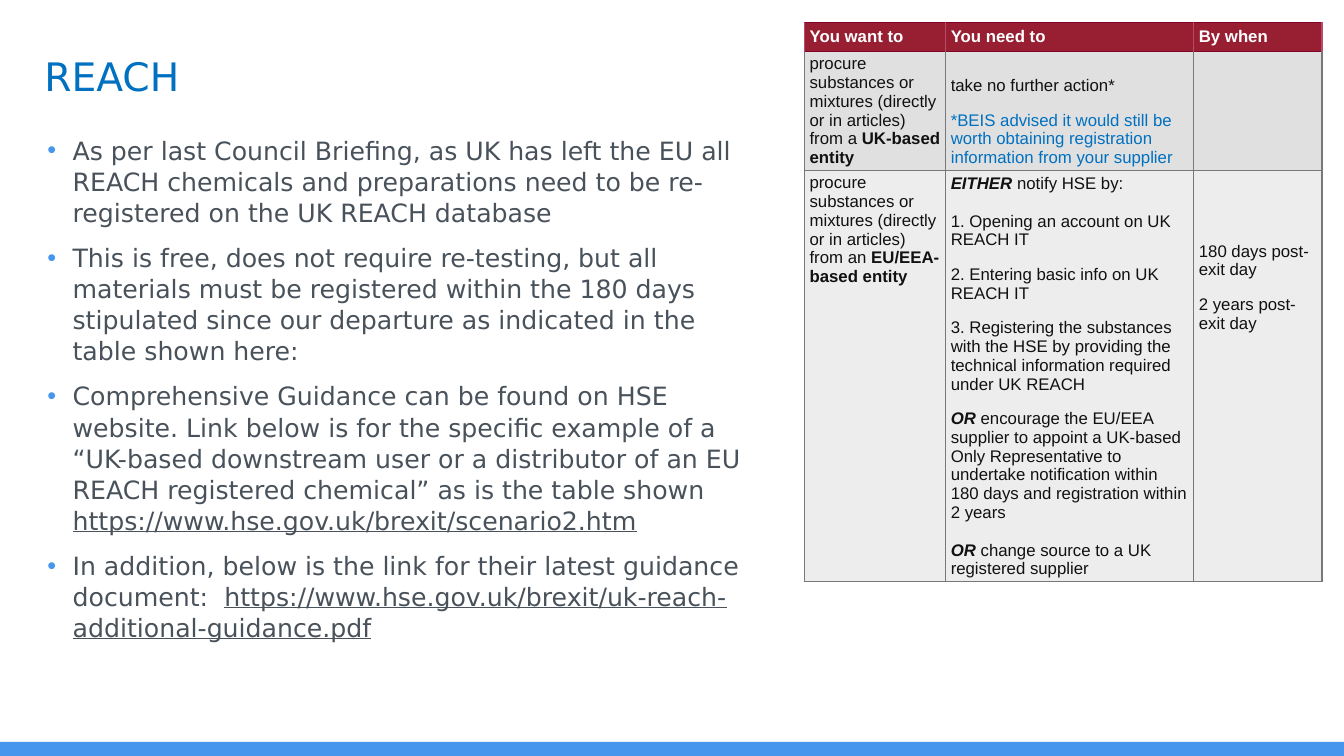
from dataclasses import dataclass

from lxml import etree
from pptx import Presentation
from pptx import util as u
from pptx.dml.color import RGBColor
from pptx.enum import shapes, text
from pptx.oxml.ns import qn


@dataclass(frozen=True)
class Theme:
    """Colours, fonts and type sizes of the slide."""
    accent: str = "4596EC"
    blue: str = "0070C0"
    slate: str = "49525B"
    ink: str = "111111"
    white: str = "FFFFFF"
    crimson: str = "981E32"
    crimson_dark: str = "7F032A"
    crimson_light: str = "B94869"
    rule: str = "787878"
    row_fills: tuple = ("E0E0E0", "EDEDED")
    head_font: str = "DejaVu Sans"
    table_font: str = "Arial"
    title_size: float = 28
    body_size: float = 18
    table_size: float = 12
    bullet_gap: float = 10
    cell_gap: float = 11.2
    line_gap: float = 13.4


THEME = Theme()
WIDTH, HEIGHT = u.Inches(13.33), u.Inches(7.5)

BULLETS = [
    [("As per last Council Briefing, as UK has left the EU all REACH chemicals and "
      "preparations need to be re-registered on the UK REACH database", "")],
    [("This is free, does not require re-testing, but all materials must be registered "
      "within the 180 days stipulated since our departure as indicated in the table "
      "shown here:", "")],
    [("Comprehensive Guidance can be found on HSE website. Link below is for the specific "
      "example of a “UK-based downstream user or a distributor of an EU REACH registered "
      "chemical” as is the table shown ", ""),
     ("https://www.hse.gov.uk/brexit/scenario2.htm", "u")],
    [("In addition, below is the link for their latest guidance document:  ", ""),
     ("https://www.hse.gov.uk/brexit/uk-reach-additional-guidance.pdf", "u")],
]

HEADINGS = ["You want to", "You need to", "By when"]
SOURCING = "procure substances or mixtures (directly or in articles) from "
UK_WANT = [([(SOURCING + "a ", ""), ("UK-based entity", "b")], 0)]
UK_NEED = [
    ([("take no further action*", "")], THEME.cell_gap),
    ([("*BEIS advised it would still be worth obtaining registration information from "
       "your supplier", "c")], 0),
]
EU_WANT = [([(SOURCING + "an ", ""), ("EU/EEA-based entity", "b")], 0)]
EU_NEED = [
    ([("EITHER ", "bi"), ("notify HSE by:", "")], THEME.line_gap),
    ([("1. Opening an account on UK REACH IT", "")], THEME.cell_gap),
    ([("2. Entering basic info on UK REACH IT", "")], THEME.cell_gap),
    ([("3. Registering the substances with the HSE by providing the technical "
       "information required under UK REACH", "")], THEME.cell_gap),
    ([("OR ", "bi"), ("encourage the EU/EEA supplier to appoint a UK-based Only "
                      "Representative to undertake notification within 180 days and "
                      "registration within 2 years", "")], THEME.line_gap),
    ([("OR", "bi"), (" change source to a UK registered supplier", "")], 0),
]
EU_WHEN = [
    ([("180 days post-exit day", "")], THEME.cell_gap),
    ([("2 years post-exit day", "")], 0),
]


def share(left, top, width, height):
    """Turn percentages of the slide into a box."""
    return tuple(round(part * side / 100) for part, side in
                 zip((left, top, width, height), (WIDTH, HEIGHT) * 2))


def place(item, box):
    """Move a placeholder into a box."""
    item.left, item.top, item.width, item.height = box


def add_runs(paragraph, runs, font, size, color):
    """Write runs; marks are b bold, i italic, u underlined, c blue."""
    for words, marks in runs:
        run = paragraph.add_run()
        run.text = words
        run.font.name, run.font.size = font, u.Pt(size)
        run.font.bold, run.font.italic = "b" in marks, "i" in marks
        run.font.underline = "u" in marks
        run.font.color.rgb = RGBColor.from_string(THEME.blue if "c" in marks else color)


def next_paragraph(frame, index):
    """Return the first paragraph of a frame, or a further one."""
    return frame.paragraphs[0] if index == 0 else frame.add_paragraph()


def prepare(frame):
    """Give a frame top anchoring, wrapping and a fixed size."""
    frame.word_wrap = True
    frame.auto_size = text.MSO_AUTO_SIZE.NONE
    frame.vertical_anchor = text.MSO_ANCHOR.TOP


def add_color(parent, color):
    """Append a solid colour to an XML element."""
    solid = etree.SubElement(parent, qn("a:solidFill"))
    etree.SubElement(solid, qn("a:srgbClr"), val=color)


def draw_footer(slide, box):
    """Draw the strip along the foot of the slide."""
    strip = slide.shapes.add_shape(shapes.MSO_SHAPE.RECTANGLE, *box)
    strip.shadow.inherit = False
    strip.fill.solid()
    strip.fill.fore_color.rgb = RGBColor.from_string(THEME.accent)
    strip.line.fill.background()


def fill_title(title, box):
    """Place and write the title."""
    place(title, box)
    frame = title.text_frame
    prepare(frame)
    frame.margin_left, frame.margin_top = u.Inches(0.07), u.Inches(0.08)
    heading = frame.paragraphs[0]
    heading.alignment = text.PP_ALIGN.LEFT
    add_runs(heading, [("REACH", "")], THEME.head_font, THEME.title_size, THEME.blue)


def fill_bullets(body, box):
    """Place and write the bullet list."""
    place(body, box)
    frame = body.text_frame
    prepare(frame)
    for index, runs in enumerate(BULLETS):
        point = next_paragraph(frame, index)
        props = point._p.get_or_add_pPr()
        props.set("marL", str(u.Inches(0.25)))
        props.set("indent", str(-u.Inches(0.25)))
        tint = etree.SubElement(props, qn("a:buClr"))
        etree.SubElement(tint, qn("a:srgbClr"), val=THEME.accent)
        etree.SubElement(props, qn("a:buChar"), char="•")
        point.line_spacing = 1.03
        point.space_before = u.Pt(THEME.bullet_gap if index else 0)
        add_runs(point, runs, THEME.head_font, THEME.body_size, THEME.slate)


def fill_cell(cell, paragraphs, fill, color, sides, bottom=False, pad=0.03, top=None):
    """Write one cell; sides are the left, right, top and bottom line colours."""
    props = cell._tc.get_or_add_tcPr()
    for side, side_color in zip("LRTB", sides):
        line = etree.SubElement(props, qn("a:ln" + side), w=str(u.Pt(1)))
        add_color(line, side_color)
    cell.fill.solid()
    cell.fill.fore_color.rgb = RGBColor.from_string(fill)
    cell.margin_left = cell.margin_right = u.Inches(0.05)
    cell.margin_top, cell.margin_bottom = u.Inches(top or pad), u.Inches(pad)
    cell.vertical_anchor = text.MSO_ANCHOR.BOTTOM if bottom else text.MSO_ANCHOR.TOP
    for index, (runs, gap) in enumerate(paragraphs):
        paragraph = next_paragraph(cell.text_frame, index)
        paragraph.space_after = u.Pt(gap)
        add_runs(paragraph, runs, THEME.table_font, THEME.table_size, color)


def draw_deadlines(slide, box):
    """Draw the table of aims, duties and deadlines."""
    table = slide.shapes.add_table(3, 3, *box).table
    table.horz_banding = False
    for lines, weights, attr, extent in (
            (table.columns, (1.4, 2.46, 1.27), "width", box[2]),
            (table.rows, (0.29, 1.18, 4.08), "height", box[3])):
        for line, weight in zip(lines, weights):
            setattr(line, attr, round(extent * weight / sum(weights)))
    for column, heading in enumerate(HEADINGS):
        fill_cell(table.cell(0, column), [([(heading, "b")], 0)], THEME.crimson, THEME.white,
                  (THEME.crimson_light,) * 2 + (THEME.crimson_dark,) * 2, True, 0.05)
    entries = [(UK_WANT, UK_NEED, []), (EU_WANT, EU_NEED, EU_WHEN)]
    for row, (cells, fill) in enumerate(zip(entries, THEME.row_fills), 1):
        ceiling = THEME.crimson_dark if row == 1 else THEME.rule
        for column, paragraphs in enumerate(cells):
            fill_cell(table.cell(row, column), paragraphs, fill, THEME.ink,
                      (THEME.rule, THEME.rule, ceiling, THEME.rule), column == 1,
                      top=0.71 if paragraphs is EU_WHEN else None)


def main():
    """Build and save the slide."""
    deck = Presentation()
    deck.slide_width, deck.slide_height = WIDTH, HEIGHT
    slide = deck.slides.add_slide(deck.slide_layouts[1])
    draw_footer(slide, share(0, 98.13, 100, 1.87))
    fill_title(slide.shapes.title, share(2.78, 5.87, 58, 8.67))
    fill_bullets(slide.placeholders[1], share(2.78, 17.07, 53.5, 80))
    draw_deadlines(slide, share(59.86, 2.93, 38.5, 74))
    deck.save("out.pptx")


if __name__ == "__main__":
    main()
